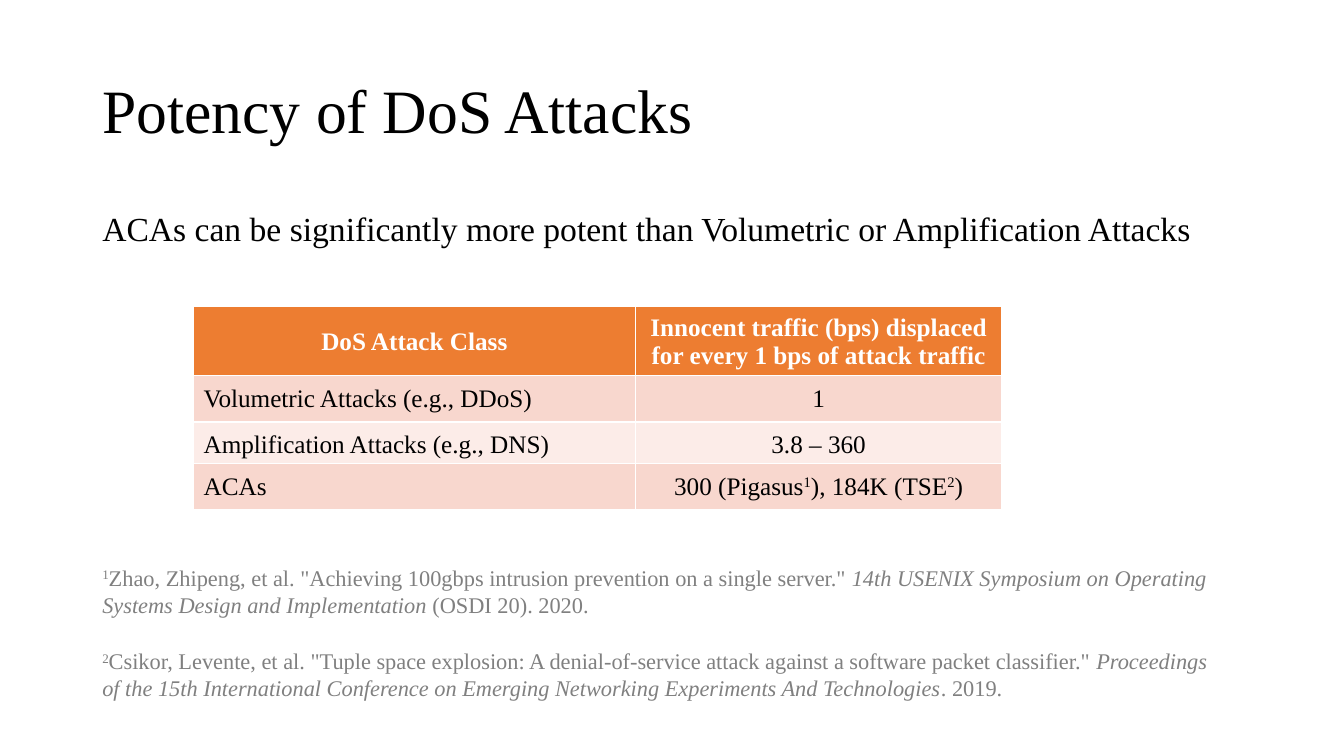
import pptx
import pptx.util
import pptx.dml.color
import pptx.enum.text
import pptx.oxml
import pptx.oxml.ns

Pt = pptx.util.Pt
RGBColor = pptx.dml.color.RGBColor
ALIGN = pptx.enum.text.PP_ALIGN
ANCHOR = pptx.enum.text.MSO_ANCHOR

BLACK = RGBColor(0x00, 0x00, 0x00)
WHITE = RGBColor(0xFF, 0xFF, 0xFF)
GRAY = RGBColor(0x80, 0x80, 0x80)
ORANGE = RGBColor(0xED, 0x7D, 0x31)
PEACH = RGBColor(0xF8, 0xD7, 0xCE)
PALE = RGBColor(0xFC, 0xEC, 0xE8)
FONT = "Times New Roman"

TITLE = [("Potency of DoS Attacks", "")]
CLAIM = [("ACAs can be significantly more potent than Volumetric or Amplification Attacks", "")]
ATTACK_ROWS = [
    (219, 48.5, ORANGE, WHITE,
     [("DoS Attack Class", "bold")],
     [("Innocent traffic (bps) displaced for every 1 bps of attack traffic", "bold")]),
    (268.5, 33, PEACH, BLACK,
     [("Volumetric Attacks (e.g., DDoS)", "")],
     [("1", "")]),
    (301.5, 33, PALE, BLACK,
     [("Amplification Attacks (e.g., DNS)", "")],
     [("3.8 – 360", "")]),
    (331, 33, PEACH, BLACK,
     [("ACAs", "")],
     [("300 (Pigasus", ""), ("1", "super"), ("), 184K (TSE", ""), ("2", "super"), (")", "")]),
]
REFERENCES = [
    [("1", "super"),
     ('Zhao, Zhipeng, et al. "Achieving 100gbps intrusion prevention on a single server." ', ""),
     ("14th USENIX Symposium on Operating Systems Design and Implementation", "italic"),
     (" (OSDI 20). 2020.", "")],
    [("2", "super"),
     ('Csikor, Levente, et al. "Tuple space explosion: A denial-of-service attack against a software packet classifier." ', ""),
     ("Proceedings of the 15th International Conference on Emerging Networking Experiments And Technologies", "italic"),
     (". 2019.", "")],
]
LEFT = 66
TABLE_LEFT = 138.25
COLUMNS = (315.5, 262)


def add_spans(para, spans, size, color):
    for text, style in spans:
        span = para.add_run()
        span.text = text
        span.font.name = FONT
        span.font.size = Pt(size)
        span.font.color.rgb = color
        span.font.bold = style == "bold"
        span.font.italic = style == "italic"
        if style == "super":
            span._r.get_or_add_rPr().set("baseline", "30000")


def add_text(page, top, width, height, paragraphs, size, color, gap=0):
    box = page.shapes.add_textbox(Pt(LEFT), Pt(top), Pt(width), Pt(height))
    frame = box.text_frame
    frame.word_wrap = True
    for index, spans in enumerate(paragraphs):
        para = frame.add_paragraph() if index else frame.paragraphs[0]
        if index:
            para.space_before = Pt(gap)
        add_spans(para, spans, size, color)
    return frame


def add_borders(cell, bottom_width):
    properties = cell._tc.get_or_add_tcPr()
    for side, width in (("L", 1), ("R", 1), ("T", 1), ("B", bottom_width)):
        properties.append(pptx.oxml.parse_xml(
            f'<a:ln{side} {pptx.oxml.ns.nsdecls("a")} w="{Pt(width)}">'
            f'<a:solidFill><a:srgbClr val="{WHITE}"/></a:solidFill></a:ln{side}>'))


def add_attack_row(page, top, height, fill, color, *contents):
    frame = page.shapes.add_table(
        1, 2, Pt(TABLE_LEFT), Pt(top), Pt(sum(COLUMNS)), Pt(height))
    table = frame.table
    table.first_row = False
    table.horz_banding = False
    table.rows[0].height = Pt(height)
    header = fill == ORANGE
    for index, spans in enumerate(contents):
        table.columns[index].width = Pt(COLUMNS[index])
        cell = table.cell(0, index)
        add_borders(cell, 3 if header else 1)
        cell.fill.solid()
        cell.fill.fore_color.rgb = fill
        cell.vertical_anchor = ANCHOR.MIDDLE
        para = cell.text_frame.paragraphs[0]
        para.alignment = ALIGN.CENTER if header or index else ALIGN.LEFT
        add_spans(para, spans, 18, color)


def main():
    deck = pptx.Presentation()
    deck.slide_width = Pt(960)
    deck.slide_height = Pt(540)
    page = deck.slides.add_slide(deck.slide_layouts[6])

    title = add_text(page, 28.75, 844.5, 104.5, [TITLE], 44, BLACK)
    title.vertical_anchor = ANCHOR.MIDDLE
    title.paragraphs[0].line_spacing = 0.9
    add_text(page, 145, 799, 42.5, [CLAIM], 24, BLACK)
    for row in ATTACK_ROWS:
        add_attack_row(page, *row)
    add_text(page, 399.5, 811.5, 103, REFERENCES, 16, GRAY, gap=21)

    deck.save("out.pptx")


if __name__ == "__main__":
    main()
